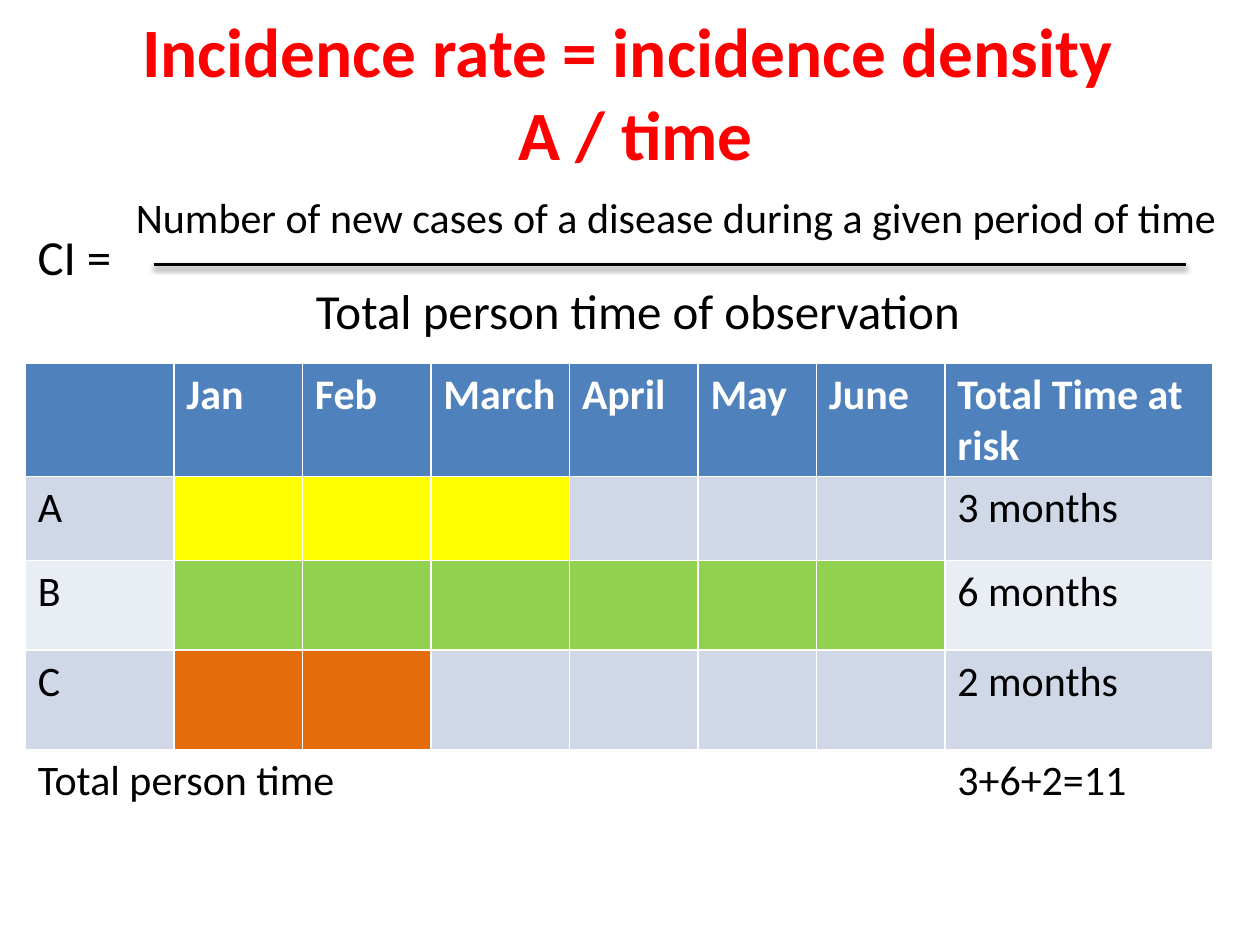
"""Build a slide that defines incidence rate and tabulates person time at risk."""
from dataclasses import dataclass

from lxml.etree import SubElement
from pptx import Presentation
from pptx.dml.color import RGBColor
from pptx.enum.shapes import MSO_CONNECTOR
from pptx.enum.text import MSO_ANCHOR as Anchor, PP_ALIGN as Align
from pptx.oxml.ns import qn
from pptx.util import Inches, Pt

FONT = "Calibri"
BLACK = RGBColor(0x00, 0x00, 0x00)
WHITE = RGBColor(0xFF, 0xFF, 0xFF)
RED = RGBColor(0xFF, 0x00, 0x00)
BLUE = RGBColor(0x4F, 0x81, 0xBD)
BAND_DARK = RGBColor(0xD0, 0xD8, 0xE8)
BAND_LIGHT = RGBColor(0xE9, 0xED, 0xF4)
YELLOW = RGBColor(0xFF, 0xFF, 0x00)
GREEN = RGBColor(0x92, 0xD0, 0x50)
ORANGE = RGBColor(0xE4, 0x6C, 0x0A)


@dataclass
class Label:
    text: str
    left: float
    top: float
    width: float
    height: float
    size: float
    color: RGBColor = BLACK
    bold: bool = False
    align: Align = Align.LEFT
    anchor: Anchor = Anchor.TOP


@dataclass
class Person:
    name: str
    months: int
    color: RGBColor
    band: RGBColor


LABELS = [
    Label("Incidence rate = incidence density \vA / time", 0.28, 0.38, 9.53, 0.69,
          39.6, RED, True, Align.CENTER, Anchor.MIDDLE),
    Label("CI =", 0.2, 1.75, 0.9, 0.57, 28),
    Label("Number of new cases of a disease during a given period of time",
          0.98, 1.47, 8.86, 0.5, 24),
    Label("Total person time of observation", 2.41, 2.18, 5.37, 0.57, 28),
]
HEADERS = ["", "Jan", "Feb", "March", "April", "May", "June", "Total Time at risk"]
COL_WIDTHS = [1.18, 1.02, 1.02, 1.1, 1.02, 0.94, 1.02, 2.13]
ROW_HEIGHTS = [0.84, 0.67, 0.71, 0.79, 0.71]
PEOPLE = [
    Person("A", 3, YELLOW, BAND_DARK),
    Person("B", 6, GREEN, BAND_LIGHT),
    Person("C", 2, ORANGE, BAND_DARK),
]


def style_text(tf, size: float, color: RGBColor, bold: bool) -> None:
    for p in tf.paragraphs:
        for r in p.runs:
            r.font.name = FONT
            r.font.size = Pt(size)
            r.font.bold = bold
            r.font.color.rgb = color


def add_label(s, label: Label) -> None:
    sp = s.shapes.add_textbox(Inches(label.left), Inches(label.top),
                              Inches(label.width), Inches(label.height))
    tf = sp.text_frame
    tf.word_wrap = False
    tf.vertical_anchor = label.anchor
    p = tf.paragraphs[0]
    p.text = label.text
    p.alignment = label.align
    style_text(tf, label.size, label.color, label.bold)


def add_fraction_bar(s) -> None:
    bar = s.shapes.add_connector(MSO_CONNECTOR.STRAIGHT, Inches(1.22), Inches(2.1),
                                 Inches(9.41), Inches(2.1))
    bar.line.color.rgb = BLACK
    bar.line.width = Pt(2)
    effects = SubElement(bar._element.spPr, qn("a:effectLst"))
    shadow = SubElement(effects, qn("a:outerShdw"), blurRad=str(Pt(3.1)),
                        dist=str(Pt(1.6)), dir="5400000", rotWithShape="0")
    tint = SubElement(shadow, qn("a:srgbClr"), val=str(BLACK))
    SubElement(tint, qn("a:alpha"), val="38000")


def set_cell(cell, text: str, fill: RGBColor | None,
             color: RGBColor = BLACK, bold: bool = False) -> None:
    if fill is None:
        cell.fill.background()
    else:
        cell.fill.solid()
        cell.fill.fore_color.rgb = fill
    if text:
        cell.text_frame.text = text
        style_text(cell.text_frame, 24, color, bold)


def add_time_table(s) -> None:
    table = s.shapes.add_table(len(ROW_HEIGHTS), len(COL_WIDTHS), Inches(0.2), Inches(2.88),
                               Inches(sum(COL_WIDTHS)), Inches(sum(ROW_HEIGHTS))).table
    for col, width in zip(table.columns, COL_WIDTHS):
        col.width = Inches(width)
    for row, height in zip(table.rows, ROW_HEIGHTS):
        row.height = Inches(height)

    last = len(HEADERS) - 1
    total_row = len(PEOPLE) + 1
    for c, header in enumerate(HEADERS):
        set_cell(table.cell(0, c), header, BLUE, WHITE, True)
        set_cell(table.cell(total_row, c), "", None)
    for r, person in enumerate(PEOPLE, 1):
        texts = {0: person.name, last: f"{person.months} months"}
        for c in range(len(HEADERS)):
            at_risk = 1 <= c <= person.months
            set_cell(table.cell(r, c), texts.get(c, ""),
                     person.color if at_risk else person.band)

    months = [person.months for person in PEOPLE]
    table.cell(total_row, 0).merge(table.cell(total_row, 2))
    set_cell(table.cell(total_row, 0), "Total person time", None)
    set_cell(table.cell(total_row, last), f"{'+'.join(map(str, months))}={sum(months)}", None)


def main() -> None:
    prs = Presentation()
    prs.slide_width, prs.slide_height = Inches(10), Inches(7.5)
    s = prs.slides.add_slide(prs.slide_layouts[6])
    for label in LABELS:
        add_label(s, label)
    add_fraction_bar(s)
    add_time_table(s)
    prs.save("out.pptx")


if __name__ == "__main__":
    main()
